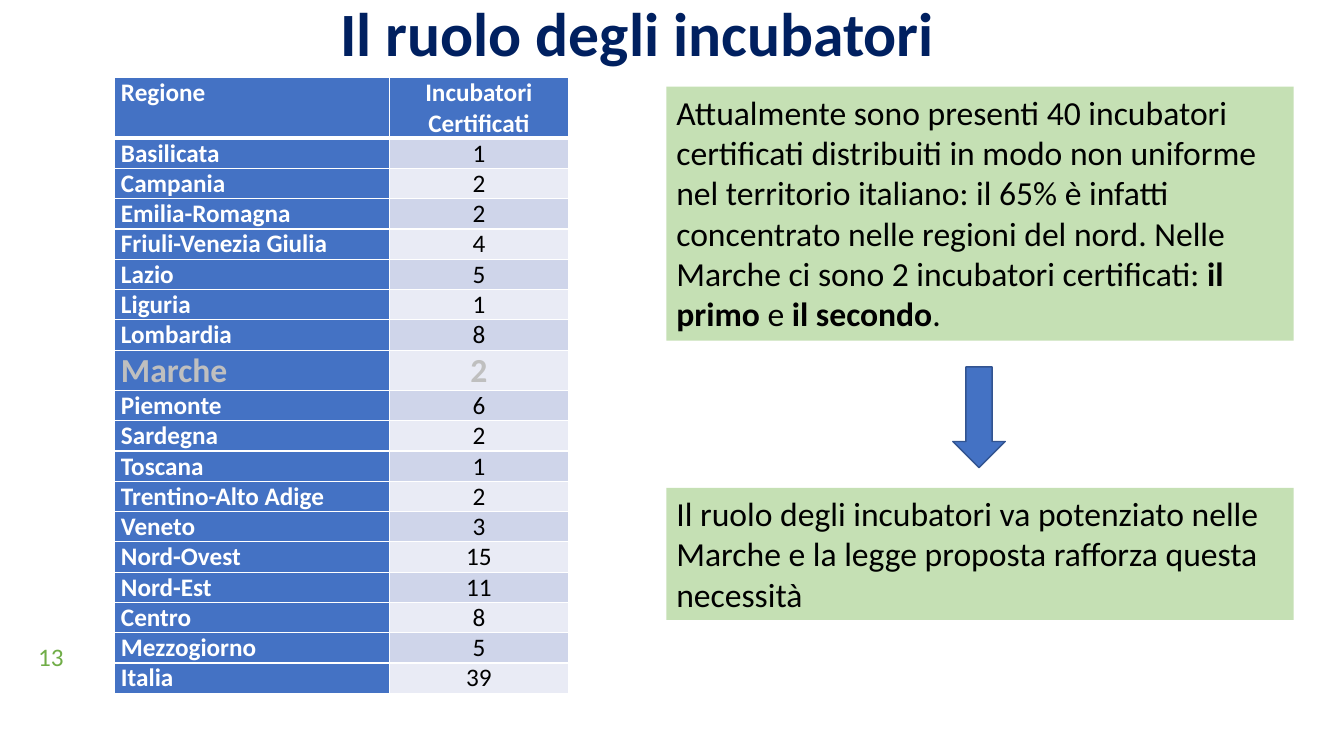
from lxml.etree import SubElement
from pptx import Presentation
from pptx.dml.color import RGBColor
from pptx.enum.shapes import MSO_SHAPE
from pptx.enum.text import MSO_ANCHOR, MSO_AUTO_SIZE, PP_ALIGN
from pptx.oxml.ns import qn
from pptx.util import Inches, Pt

COLOURS = {
    "title": "002060", "number": "70AD47", "box": "C5E0B4", "blue": "4472C4",
    "outline": "325491", "odd": "CFD5EA", "even": "E9EBF5",
    "white": "FFFFFF", "black": "000000", "highlight": "BFBFBF",
}
REGIONS = [
    ("Basilicata", 1), ("Campania", 2), ("Emilia-Romagna", 2),
    ("Friuli-Venezia Giulia", 4), ("Lazio", 5), ("Liguria", 1),
    ("Lombardia", 8), ("Marche", 2), ("Piemonte", 6), ("Sardegna", 2),
    ("Toscana", 1), ("Trentino-Alto Adige", 2), ("Veneto", 3),
    ("Nord-Ovest", 15), ("Nord-Est", 11), ("Centro", 8),
    ("Mezzogiorno", 5), ("Italia", 39),
]
SITUATION = [
    ("Attualmente sono presenti 40 incubatori certificati distribuiti in modo "
     "non uniforme nel territorio italiano: il 65% è infatti concentrato nelle "
     "regioni del nord. Nelle Marche ci sono 2 incubatori certificati: ", False),
    ("il primo", True), (" e ", False), ("il secondo", True), (".", False),
]
CONCLUSION = [
    ("Il ruolo degli incubatori va potenziato nelle Marche e la legge proposta "
     "rafforza questa necessità", False),
]


def colour(name):
    """Return the named colour."""
    return RGBColor.from_string(COLOURS[name])


def add_span(para, text, size, shade, bold=False):
    """Add one formatted run to a paragraph."""
    span = para.add_run()
    span.text = text
    span.font.name = "Calibri"
    span.font.size = Pt(size)
    span.font.bold = bold
    span.font.color.rgb = colour(shade)


def add_title(page, left, top, width, height):
    """Place the slide title, raised one line above the bottom of its box."""
    title = page.shapes.title
    title.left, title.top, title.width, title.height = map(
        Inches, (left, top, width, height))
    frame = title.text_frame
    frame.word_wrap = True
    frame.vertical_anchor = MSO_ANCHOR.BOTTOM
    frame.margin_bottom = Inches(0.71)
    para = frame.paragraphs[0]
    para.alignment = PP_ALIGN.CENTER
    para.line_spacing = 0.9
    add_span(para, "Il ruolo degli incubatori", 44, "title", True)


def add_text(page, left, top, width, height, spans, size, shade, fill=None):
    """Add a wrapped text box with an optional fill."""
    box = page.shapes.add_textbox(*map(Inches, (left, top, width, height)))
    if fill:
        box.fill.solid()
        box.fill.fore_color.rgb = colour(fill)
    box.text_frame.word_wrap = True
    box.text_frame.auto_size = MSO_AUTO_SIZE.SHAPE_TO_FIT_TEXT
    for text, bold in spans:
        add_span(box.text_frame.paragraphs[0], text, size, shade, bold)


def style_cell(cell, lines, size, shade, bold, fill, centred, top, bottom):
    """Write a cell and set its margins, borders and fill."""
    cell.margin_left = cell.margin_right = Inches(0.07)
    cell.margin_top = cell.margin_bottom = 0
    for index, text in enumerate(lines):
        frame = cell.text_frame
        para = frame.add_paragraph() if index else frame.paragraphs[0]
        para.alignment = PP_ALIGN.CENTER if centred else PP_ALIGN.LEFT
        add_span(para, text, size, shade, bold)
    properties = cell._tc.get_or_add_tcPr()
    for side, width in (("L", 1), ("R", 1), ("T", top), ("B", bottom)):
        line = SubElement(properties, qn(f"a:ln{side}"), w=str(Pt(width)))
        solid = SubElement(line, qn("a:solidFill"))
        SubElement(solid, qn("a:srgbClr"), val=COLOURS["white"])
    cell.fill.solid()
    cell.fill.fore_color.rgb = colour(fill)


def add_region_table(page, left, top, width, height):
    """Add the table of certified incubators by region."""
    table = page.shapes.add_table(
        len(REGIONS) + 1, 2, *map(Inches, (left, top, width, height))).table
    table.columns[0].width = Inches(2.73)
    table.columns[1].width = Inches(width - 2.73)
    table.rows[0].height = Inches(0.6)
    headings = (["Regione"], ["Incubatori", "Certificati"])
    for column, lines in enumerate(headings):
        style_cell(table.cell(0, column), lines, 18, "white", True, "blue",
                   column == 1, 1, 3)
    for row, (region, count) in enumerate(REGIONS, 1):
        marked = region == "Marche"
        size = 24 if marked else 18
        table.rows[row].height = Inches(0.4 if marked else 0.3)
        edge = 3 if row == 1 else 1
        style_cell(table.cell(row, 0), [region], size,
                   "highlight" if marked else "white", True, "blue",
                   False, edge, 1)
        style_cell(table.cell(row, 1), [str(count)], size,
                   "highlight" if marked else "black", marked,
                   "odd" if row % 2 else "even", True, edge, 1)


def add_down_arrow(page, left, top, width, height):
    """Add the arrow leading to the conclusion."""
    arrow = page.shapes.add_shape(
        MSO_SHAPE.DOWN_ARROW, *map(Inches, (left, top, width, height)))
    arrow.shadow.inherit = False
    arrow.fill.solid()
    arrow.fill.fore_color.rgb = colour("blue")
    arrow.line.color.rgb = colour("outline")
    arrow.line.width = Pt(1)


def main():
    """Build and save the slide."""
    deck = Presentation()
    deck.slide_width, deck.slide_height = Inches(13.33), Inches(7.5)
    page = deck.slides.add_slide(deck.slide_layouts[5])
    add_title(page, -0.44, -0.4, 13.53, 1.8)
    add_text(page, 0.28, 6.31, 0.49, 0.4, [("13", False)], 18, "number")
    add_text(page, 6.61, 0.86, 6.22, 2.52, SITUATION, 24, "black", "box")
    add_text(page, 6.61, 4.84, 6.22, 1.31, CONCLUSION, 24, "black", "box")
    add_region_table(page, 1.13, 0.77, 4.51, 6.1)
    add_down_arrow(page, 9.45, 3.64, 0.52, 1)
    deck.save("out.pptx")


if __name__ == "__main__":
    main()
